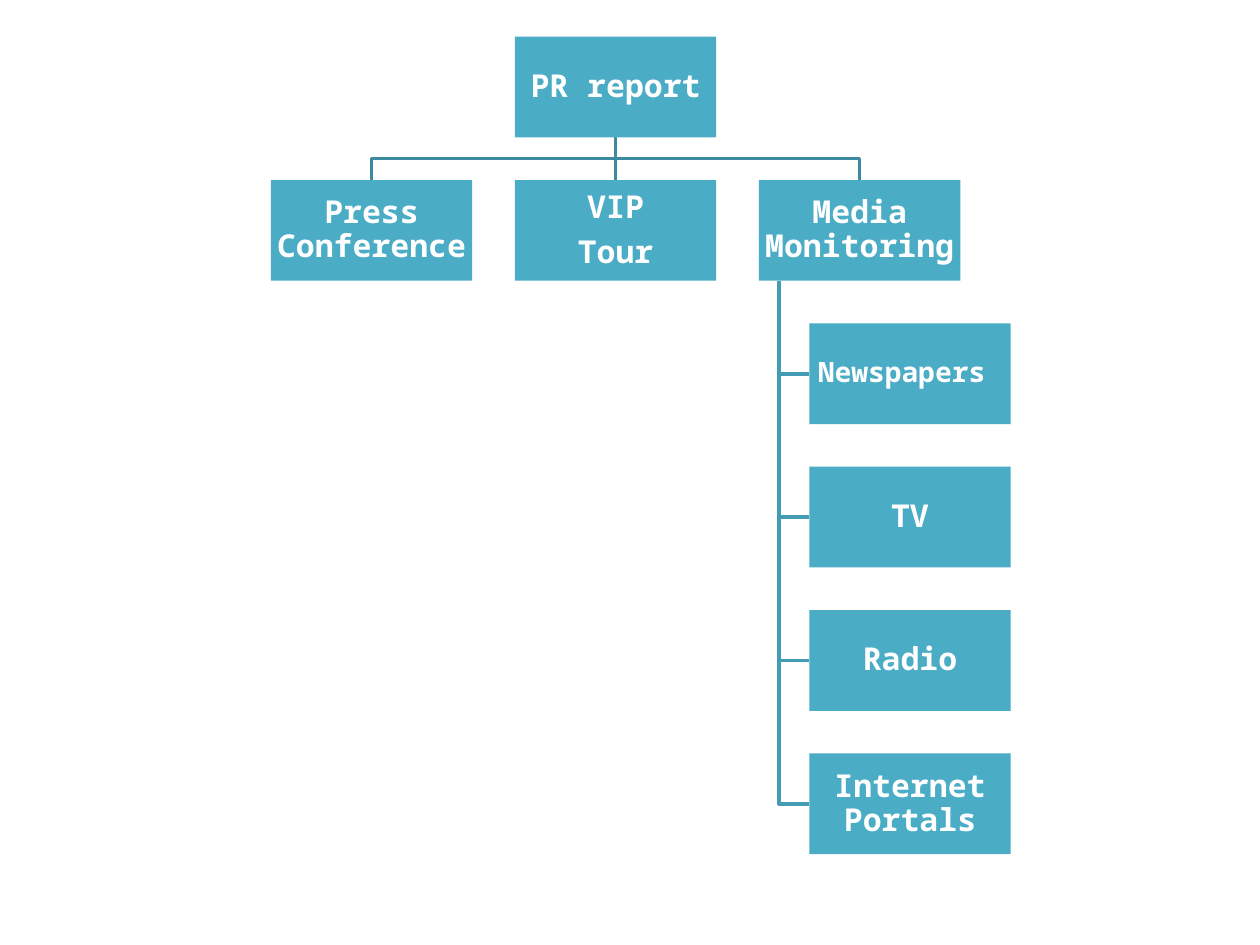
from lxml import etree
from pptx import Presentation
from pptx import util as u
from pptx.dml.color import RGBColor
from pptx.enum import shapes, text
from pptx.oxml.ns import qn

# Colours
BOX_FILL = RGBColor(0x4B, 0xAC, 0xC6)
UPPER_LINE = RGBColor(0x3C, 0x8A, 0x9F)
LOWER_LINE = RGBColor(0x44, 0x9C, 0xB4)
WHITE = RGBColor(0xFF, 0xFF, 0xFF)

# Chart grid
BOX_WIDTH, BOX_HEIGHT = u.Cm(4.06), u.Cm(2.03)
LEFT, TOP = u.Cm(5.46), u.Cm(0.74)
COLUMN_STEP, ROW_STEP = u.Cm(4.92), u.Cm(2.89)
INDENT = BOX_WIDTH // 4  # media channels, from the left of their parent
SPINE = BOX_WIDTH // 10  # vertical line to the channels

ACTIVITIES = ["Press Conference", "VIP\nTour", "Media Monitoring"]
CHANNELS = [("Newspapers ", 16), ("TV", 18), ("Radio", 18), ("Internet Portals", 18)]


def write_text(shape, content, size=18, font="Noto Sans Mono", color=WHITE, bold=True):
    frame = shape.text_frame
    frame.word_wrap = True
    frame.vertical_anchor = text.MSO_ANCHOR.MIDDLE
    frame.margin_left = frame.margin_right = u.Cm(0.03)
    frame.margin_top = frame.margin_bottom = u.Cm(0.03)
    frame.text = content
    for paragraph in frame.paragraphs:
        paragraph.alignment = text.PP_ALIGN.CENTER
        paragraph.line_spacing = 0.9
        paragraph.space_after = u.Pt(size * 0.35)
        for run in paragraph.runs:
            run.font.name = font
            run.font.size = u.Pt(size)
            run.font.bold = bold
            run.font.color.rgb = color


def add_box(slide, left, top, content, size=18):
    shape = slide.shapes.add_shape(
        shapes.MSO_SHAPE.RECTANGLE, left, top, BOX_WIDTH, BOX_HEIGHT)
    shape.shadow.inherit = False
    shape.fill.solid()
    shape.fill.fore_color.rgb = BOX_FILL
    shape.line.fill.background()
    write_text(shape, content, size=size)


def add_link(slide, points, color):
    """Draw a straight connector for two points, an open bent line for more."""
    if len(points) == 2:
        link = slide.shapes.add_connector(
            shapes.MSO_CONNECTOR.STRAIGHT, *points[0], *points[1])
        etree.SubElement(link._element.spPr, qn("a:effectLst"))
    else:
        builder = slide.shapes.build_freeform(*points[0])
        builder.add_line_segments(points[1:], close=False)
        link = builder.convert_to_shape()
        link.shadow.inherit = False
        link.fill.background()
    link.line.color.rgb = color
    link.line.width = u.Pt(2)


def main():
    presentation = Presentation()
    presentation.slide_width, presentation.slide_height = u.Cm(25.4), u.Cm(19.05)
    slide = presentation.slides.add_slide(presentation.slide_layouts[6])

    columns = [LEFT + i * COLUMN_STEP for i in range(len(ACTIVITIES))]
    activity_top = TOP + ROW_STEP
    channel_tops = [activity_top + (i + 1) * ROW_STEP for i in range(len(CHANNELS))]
    channel_left = columns[-1] + INDENT

    # Links from media monitoring to its channels
    spine = columns[-1] + SPINE
    for top in reversed(channel_tops):
        middle = top + BOX_HEIGHT // 2
        add_link(slide, [(spine, activity_top + BOX_HEIGHT), (spine, middle),
                         (channel_left, middle)], LOWER_LINE)

    # Links from the report to the activities
    root_x, root_bottom = columns[1] + BOX_WIDTH // 2, TOP + BOX_HEIGHT
    bend = (root_bottom + activity_top) // 2
    for left in reversed(columns):
        x = left + BOX_WIDTH // 2
        bends = [] if x == root_x else [(root_x, bend), (x, bend)]
        add_link(slide, [(root_x, root_bottom), *bends, (x, activity_top)], UPPER_LINE)

    # Boxes
    add_box(slide, columns[1], TOP, "PR report")
    for left, name in zip(columns, ACTIVITIES):
        add_box(slide, left, activity_top, name)
    for top, (name, size) in zip(channel_tops, CHANNELS):
        add_box(slide, channel_left, top, name, size=size)

    presentation.save("out.pptx")


if __name__ == "__main__":
    main()
